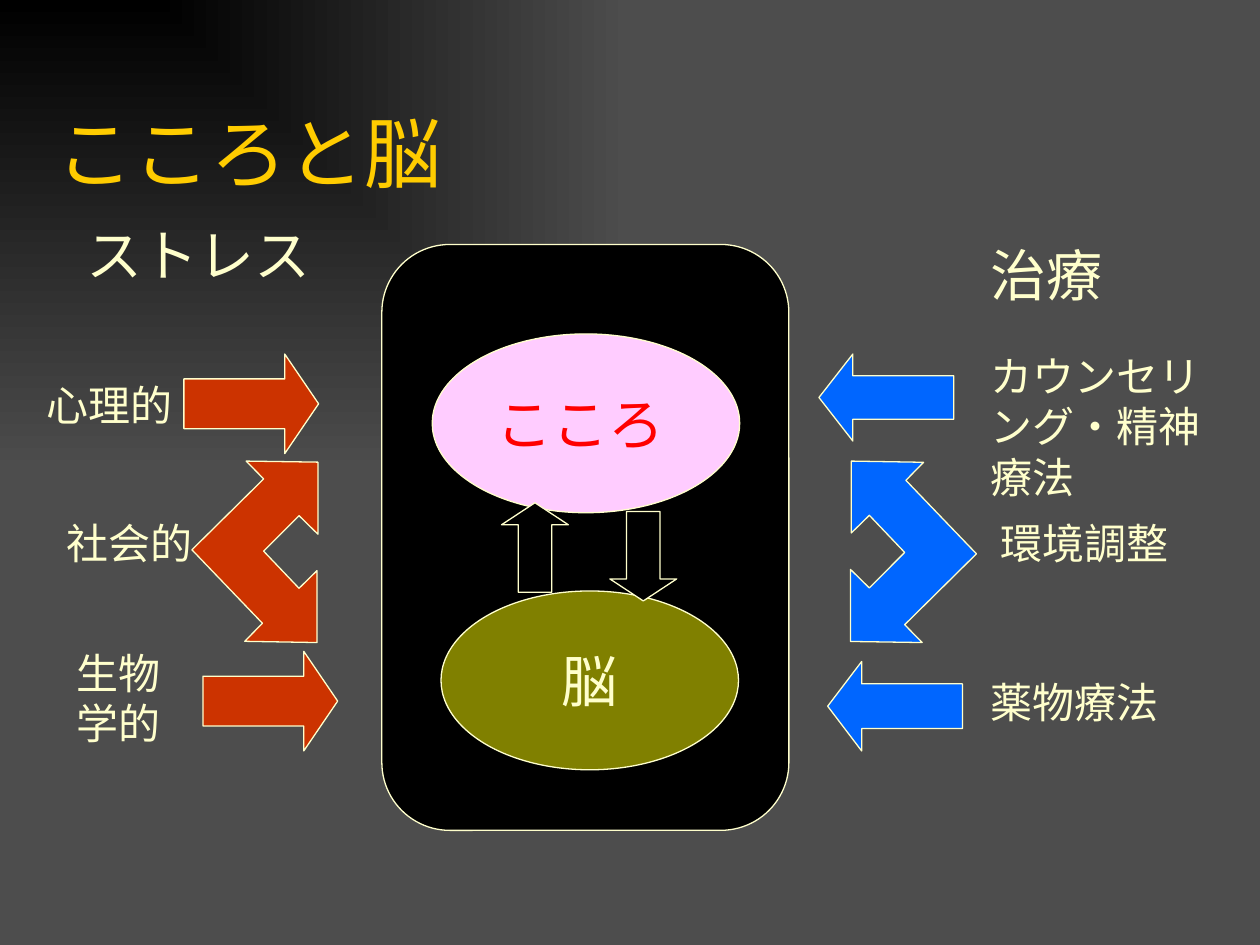
import pptx
import pptx.util
import pptx.oxml
import pptx.oxml.ns
import pptx.dml.color
import pptx.enum.shapes
import pptx.enum.text

Pt = pptx.util.Pt
SHAPE = pptx.enum.shapes.MSO_SHAPE
ALIGN = pptx.enum.text.PP_ALIGN
ANCHOR = pptx.enum.text.MSO_ANCHOR

CREAM, RED, BLUE, BLACK = "FFFFCC", "CC3300", "0066FF", "000000"

# Preset shapes: kind, (left, top, width, height), fill, adjustments, rotation
PANEL = (SHAPE.ROUNDED_RECTANGLE, (218.2, 139.7, 232.6, 334.8), BLACK, [0.167], 0)
MIND = (SHAPE.OVAL, (247, 190.8, 175.7, 102.2), "FFCCFF", [], 0)
BRAIN = (SHAPE.OVAL, (252, 337.7, 170, 102.2), "808000", [], 0)
ARROWS = [
    (SHAPE.RIGHT_ARROW, (105.1, 202.3, 77, 56.9), RED, [0.5, 0.34], 0),
    (SHAPE.RIGHT_ARROW, (116, 372.2, 77, 56.9), RED, [0.5, 0.34], 0),
    (SHAPE.LEFT_ARROW, (468, 202.3, 77, 49.7), BLUE, [0.5, 0.39], 0),
    (SHAPE.LEFT_ARROW, (473, 378, 77, 51.1), BLUE, [0.5, 0.38], 0),
    (SHAPE.UP_ARROW, (286.6, 287.3, 38.2, 51.1), BLACK, [0.5, 0.33], 0),
    (SHAPE.UP_ARROW, (348.5, 292.3, 38.2, 51.1), BLACK, [0.5, 0.33], 180),
]

# Two-headed bent arrow; the red one is the blue one turned by half a circle
BENT = [(486.5, 263.5), (486.5, 304.6), (496.8, 294.5), (517, 315.7),
        (496.8, 336), (486, 325.4), (486, 366.6), (527, 367.2),
        (517, 357), (558, 316.5), (517.7, 274.5), (527.8, 264.2)]
TURN_X, TURN_Y = 667.7, 630.7

# Labels: text, (left, top, width, height), size, colour, alignment
LABELS = [
    ("こころ", (269.3, 218.9, 124.6, 45.4), 32, "FF0000", ALIGN.CENTER),
    ("ストレス", (42.5, 122.4, 147.6, 45.4), 32, CREAM, ALIGN.LEFT),
    ("治療", (558.7, 133.9, 130.3, 45.4), 32, CREAM, ALIGN.LEFT),
    ("心理的", (19.4, 213.1, 102.2, 36), 24, CREAM, ALIGN.LEFT),
    ("社会的", (31, 292.3, 102.2, 36), 24, CREAM, ALIGN.LEFT),
    ("生物学的", (36.7, 366.5, 79.2, 64.8), 24, CREAM, ALIGN.LEFT),
    ("カウンセリング・精神療法", (558.7, 196.6, 147.6, 64.8), 24, CREAM, ALIGN.LEFT),
    ("環境調整", (564.5, 292.3, 124.6, 36), 24, CREAM, ALIGN.LEFT),
    ("薬物療法", (558.7, 383, 130.3, 36), 24, CREAM, ALIGN.LEFT),
]


def rgb(value):
    return pptx.dml.color.RGBColor.from_string(value)


def paint(sp, fill):
    sp.shadow.inherit = False
    sp.fill.solid()
    sp.fill.fore_color.rgb = rgb(fill)
    sp.line.color.rgb = rgb(CREAM)
    sp.line.width = Pt(0.75)


def add_preset(s, kind, box, fill, adjustments, rotation):
    sp = s.shapes.add_shape(kind, *map(Pt, box))
    for i, value in enumerate(adjustments):
        sp.adjustments[i] = value
    sp.rotation = rotation
    paint(sp, fill)
    return sp


def add_outline(s, points, fill):
    points = [(Pt(x), Pt(y)) for x, y in points]
    builder = s.shapes.build_freeform(*points[0])
    builder.add_line_segments(points[1:], close=True)
    paint(builder.convert_to_shape(), fill)


def write(tf, text, size, color, align, font="Roboto"):
    p = tf.paragraphs[0]
    p.alignment = align
    r = p.add_run()
    r.text = text
    r.font.size = Pt(size)
    r.font.name = font
    r.font.color.rgb = rgb(color)


def add_text(s, box):
    tf = s.shapes.add_textbox(*map(Pt, box)).text_frame
    tf.word_wrap = True
    return tf


def set_background(s):
    # Gradient spreading from the top left corner
    s.background.fill.gradient()
    grad = s.background._cSld.find(".//" + pptx.oxml.ns.qn("a:gradFill"))
    grad.getparent().replace(grad, pptx.oxml.parse_xml(
        '<a:gradFill rotWithShape="0" %s><a:gsLst>'
        '<a:gs pos="0"><a:srgbClr val="000000"/></a:gs>'
        '<a:gs pos="100000"><a:srgbClr val="4D4D4D"/></a:gs></a:gsLst>'
        '<a:path path="rect"><a:fillToRect r="100000" b="100000"/></a:path>'
        '</a:gradFill>' % pptx.oxml.ns.nsdecls("a")))


def main():
    prs = pptx.Presentation()
    prs.slide_width, prs.slide_height = Pt(720), Pt(540)
    s = prs.slides.add_slide(prs.slide_layouts[6])
    set_background(s)

    # Title
    tf = add_text(s, (25.2, 56.9, 680.4, 59.8))
    tf.vertical_anchor = ANCHOR.BOTTOM
    write(tf, "こころと脳", 44, "FFCC00", ALIGN.LEFT, "Arial")

    # Mind and brain
    add_preset(s, *PANEL)
    add_preset(s, *MIND)
    tf = add_preset(s, *BRAIN).text_frame
    tf.word_wrap = False
    tf.vertical_anchor = ANCHOR.MIDDLE
    write(tf, "脳", 32, CREAM, ALIGN.CENTER)

    # Arrows
    for arrow in ARROWS:
        add_preset(s, *arrow)
    add_outline(s, BENT, BLUE)
    add_outline(s, [(TURN_X - x, TURN_Y - y) for x, y in BENT], RED)

    # Labels
    for text, box, size, color, align in LABELS:
        write(add_text(s, box), text, size, color, align)

    prs.save("out.pptx")


if __name__ == "__main__":
    main()
